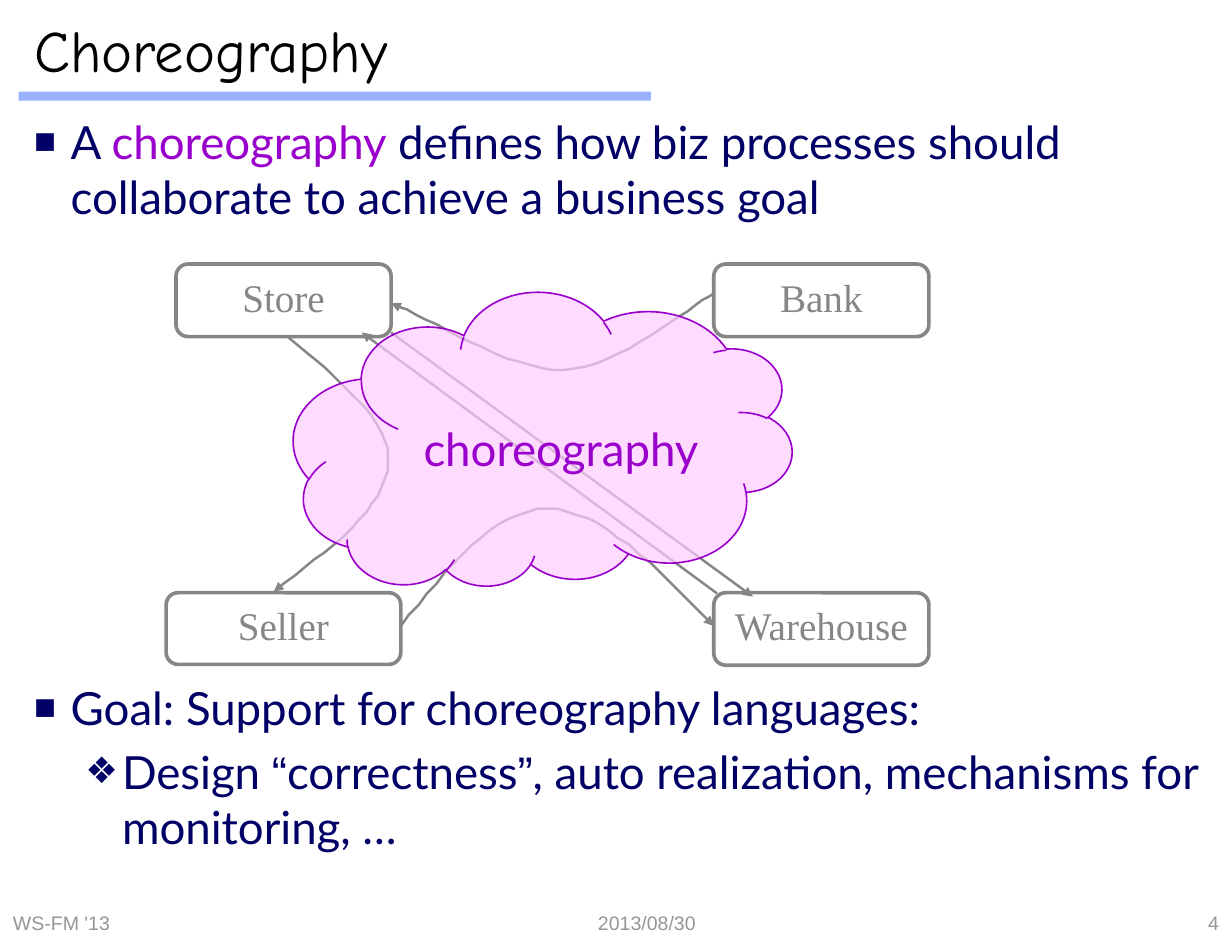
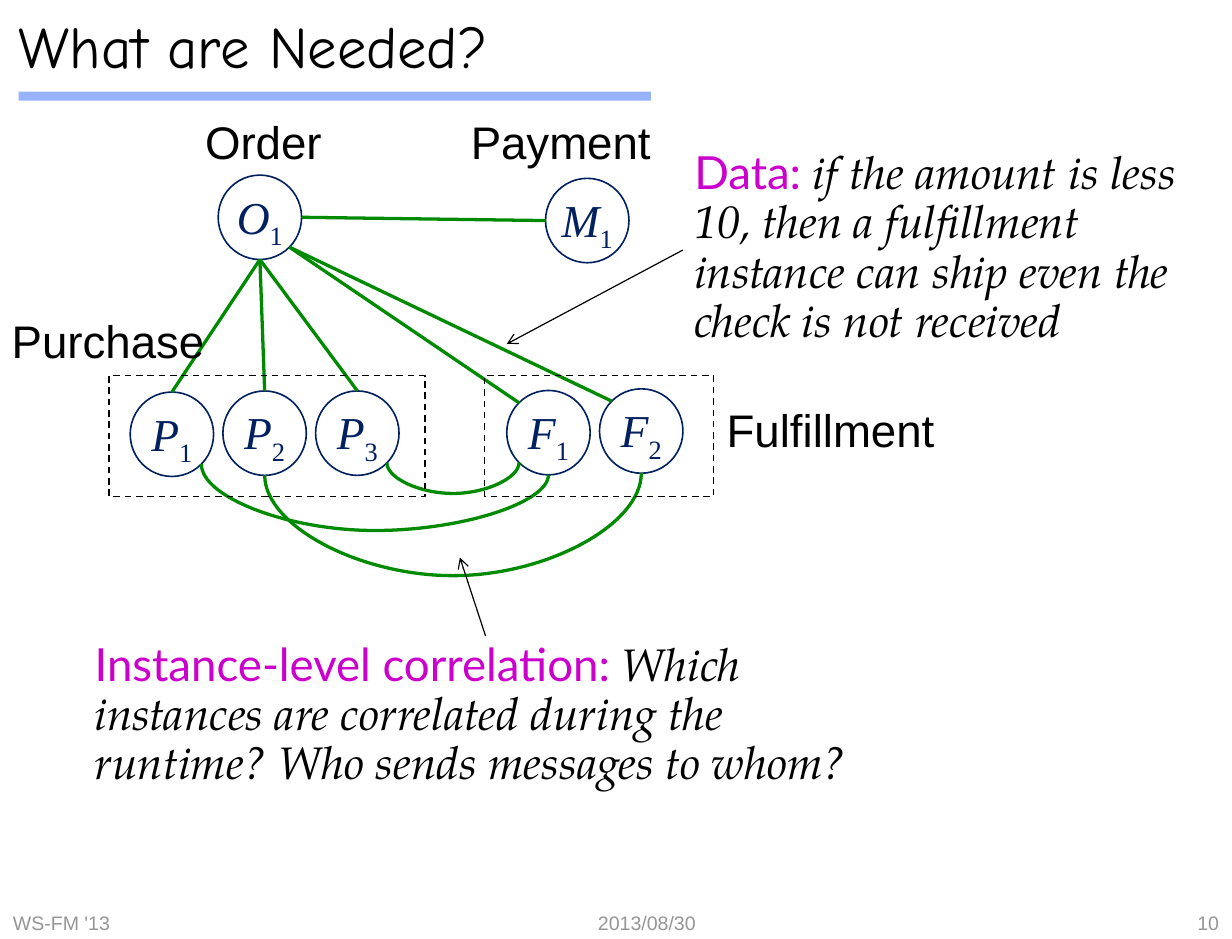
from lxml.etree import SubElement
from pptx import Presentation
from pptx.dml.color import RGBColor
from pptx.enum.dml import MSO_LINE
from pptx.enum.shapes import MSO_CONNECTOR, MSO_SHAPE
from pptx.enum.text import MSO_ANCHOR, MSO_AUTO_SIZE, PP_ALIGN
from pptx.oxml.ns import qn
from pptx.util import Pt

# ---- Content -------------------------------------------------------------
COLORS = {
    "band": "3366FF", "footer": "969696", "black": "000000", "white": "FFFFFF",
    "body": "000066", "purple": "9900CC", "cloud": "FFCCFF", "process": "868686",
    "node": "002060", "link": "008A00", "keyword": "CC00CC",
}
SANS, BODY, SERIF = "Arial", "Lato", "Times New Roman"
TITLE_FONT, NOTE_FONT = "Comic Neue", "TeX Gyre Pagella"

WIDTH, HEIGHT = 756, 576
BAND = (11.5, 56.2, 388, 5.6)
FOOTER_TOP, FOOTER_HEIGHT = 556.6, 19.4
EVENT, DATE = "WS-FM '13", "2013/08/30"

# Bullets: symbol, left margin, space before, runs of (text, font, colour)
BULLETS = [
    ("■", 22.5, 5.6, [
        ("A ", BODY, "body"), ("choreography", BODY, "purple"),
        (" defines how biz processes should collaborate to achieve a business goal",
         BODY, "body")]),
    ("■", 22.5, 280, [("Goal: Support for choreography languages:", BODY, "body")]),
    ("❖", 54, 5.6, [
        ("Design ", BODY, "body"), ("“", SANS, "body"), ("correctness", BODY, "body"),
        ("”", SANS, "body"),
        (", auto realization, mechanisms for monitoring, …", BODY, "body")]),
]
PROCESSES = [
    ("Store", (108, 162, 132, 44.5)), ("Seller", (102, 363.6, 144, 44)),
    ("Warehouse", (438, 363.6, 132, 44.5)), ("Bank", (438, 162, 132, 44.5)),
]
STRAIGHT_MESSAGES = [((440, 364), (222, 204)), ((240, 204), (462, 366))]
# Start point, then Bezier triples
CURVED_MESSAGES = [
    [(177, 207), (208, 232.5), (240, 258.5), (238.5, 284.5),
     (237, 310.5), (202.5, 337), (168, 363)],
    [(246, 384), (275, 348), (304, 312), (336, 312), (368, 312), (403, 348), (438, 384)],
    [(438, 180), (422.5, 188), (379.5, 226), (346.5, 227),
     (313, 228), (262, 194.5), (240, 186)],
]
CLOUD = (180, 180, 306, 180.7)
CLOUD_TEXT = (252, 258.5, 186, 38)

NODE_SIZE = (51.2, 51.8)
NODES = {
    "O1": (133.9, 107.4), "M1": (334.8, 109.4),
    "P1": (79.9, 240.5), "P2": (136.8, 239.8), "P3": (193.7, 239.8),
    "F1": (311, 239.5), "F2": (367.9, 238.5),
}
# Sites on an ellipse, as fractions of its size
NEAR, FAR = 0.1464, 0.8536
SITES = [(0.5, 0), (NEAR, NEAR), (0, 0.5), (NEAR, FAR),
         (0.5, 1), (FAR, FAR), (1, 0.5), (FAR, NEAR)]
# From node, site, to node, site, lowest level of a curve
CORRELATIONS = [
    ("O1", 4, "P2", 0, None), ("O1", 4, "P3", 0, None), ("O1", 4, "P1", 0, None),
    ("O1", 6, "M1", 2, None), ("O1", 5, "F1", 1, None), ("O1", 5, "F2", 1, None),
    ("P1", 5, "F1", 4, 325.5), ("P3", 5, "F1", 3, 302), ("P2", 4, "F2", 4, 353),
]
SCHEMAS = [
    ("Order", (118, 70, 88, 38)), ("Purchase", (-0.7, 192.2, 135, 38)),
    ("Payment", (281, 70, 127, 38)), ("Fulfillment", (438, 247, 145, 38)),
]
INSTANCE_GROUPS = [(67, 230.4, 193.7, 74.2), (297.4, 230.4, 140.4, 74.2)]
# Place, keyword, remark, side the arrow leaves from, arrow tip
NOTES = [
    ((419, 88.6, 326, 129.6), "Data: ",
     "if the amount is less 10, then a fulfillment instance can ship even "
     "the check is not received", 1, (311, 211)),
    ((51, 390.2, 494, 98.6), "Instance-level correlation: ",
     "Which instances are correlated during the runtime? "
     "Who sends messages to whom?", 0, (282.2, 342)),
]


# ---- Helpers -------------------------------------------------------------
def points(values):
    return [Pt(value) for value in values]


def rgb(name):
    return RGBColor.from_string(COLORS[name])


def apply(target, formats):
    for key, value in formats.items():
        setattr(target, key, value)


def add_run(paragraph, text, font, size, color, italic=None):
    run = paragraph.add_run()
    run.text = text
    apply(run.font, {"name": font, "size": Pt(size), "italic": italic})
    run.font.color.rgb = rgb(color)
    return run


def set_frame(frame, inset=7.9, anchor=MSO_ANCHOR.TOP, wrap=True):
    apply(frame, {
        "word_wrap": wrap, "auto_size": MSO_AUTO_SIZE.NONE, "vertical_anchor": anchor,
        "margin_left": Pt(inset), "margin_right": Pt(inset),
        "margin_top": Pt(3.6), "margin_bottom": Pt(3.6)})
    return frame.paragraphs[0]


def add_text(slide, place, runs, formats, **frame_options):
    box = slide.shapes.add_textbox(*points(place))
    paragraph = set_frame(box.text_frame, **frame_options)
    apply(paragraph, formats)
    for run in runs:
        add_run(paragraph, *run)
    return box


def set_alpha(shape, percent):
    color = shape.fill._xPr.find(qn("a:solidFill"))[0]
    SubElement(color, qn("a:alpha"), val=str(percent * 1000))


def paint(shape, fill=None, line=None, width=1):
    shape.shadow.inherit = False
    if fill:
        shape.fill.solid()
        shape.fill.fore_color.rgb = rgb(fill)
    else:
        shape.fill.background()
    if line:
        shape.line.color.rgb = rgb(line)
        shape.line.width = Pt(width)
    else:
        shape.line.fill.background()


def add_preset(slide, kind, place, **style):
    shape = slide.shapes.add_shape(kind, *points(place))
    paint(shape, **style)
    return shape


def add_arrowhead(item, head):
    SubElement(item.line._get_or_add_ln(), qn("a:tailEnd"), type=head)


def add_line(slide, start, end, color, width, head=None, kind=MSO_CONNECTOR.STRAIGHT):
    line = slide.shapes.add_connector(kind, *points(start + end))
    line.line.color.rgb = rgb(color)
    line.line.width = Pt(width)
    if head:
        add_arrowhead(line, head)
    SubElement(line.element.spPr, qn("a:effectLst"))
    return line


def bezier(start, c1, c2, end, steps=16):
    for step in range(1, steps + 1):
        t = step / steps
        weights = ((1 - t) ** 3, 3 * t * (1 - t) ** 2, 3 * t * t * (1 - t), t ** 3)
        yield tuple(sum(w * p[axis] for w, p in zip(weights, (start, c1, c2, end)))
                    for axis in (0, 1))


def add_curved_message(slide, controls):
    outline = [p for i in range(0, len(controls) - 1, 3) for p in bezier(*controls[i:i + 4])]
    builder = slide.shapes.build_freeform(*controls[0], scale=12700)
    builder.add_line_segments(outline, close=False)
    curve = builder.convert_to_shape()
    paint(curve, line="process", width=1.5)
    add_arrowhead(curve, "triangle")


def site_point(name, site):
    return tuple(corner + size * share
                 for corner, size, share in zip(NODES[name], NODE_SIZE, SITES[site]))


def sag(connector, start, end, lowest):
    """Turn a curved connector so that it hangs down to the lowest level."""
    rise, span = abs(end[1] - start[1]), end[0] - start[0]
    middle_x, middle_y = (start[0] + end[0]) / 2, (start[1] + end[1]) / 2
    apply(connector, {
        "left": Pt(middle_x - rise / 2), "top": Pt(middle_y - span / 2),
        "width": Pt(rise), "height": Pt(span)})
    falling = end[1] > start[1]
    xfrm = connector.element.spPr.find(qn("a:xfrm"))
    for key, value in {"rot": "16200000" if falling else "5400000", "flipH": "1",
                       "flipV": "0" if falling else "1"}.items():
        xfrm.set(key, value)
    bend = round((lowest - start[1]) / (end[1] - start[1]) * 100000)
    adjustments = connector.element.spPr.find(qn("a:prstGeom")).find(qn("a:avLst"))
    SubElement(adjustments, qn("a:gd"), name="adj1", fmla=f"val {bend}")


def add_correlation(slide, nodes, source, source_site, target, target_site, lowest):
    start, end = site_point(source, source_site), site_point(target, target_site)
    kind = MSO_CONNECTOR.CURVE if lowest else MSO_CONNECTOR.STRAIGHT
    link = add_line(slide, start, end, "link", 2, kind=kind)
    if lowest:
        sag(link, start, end, lowest)
    joints = link.element.find(qn("p:nvCxnSpPr")).find(qn("p:cNvCxnSpPr"))
    for tag, name, site in (("a:stCxn", source, source_site), ("a:endCxn", target, target_site)):
        SubElement(joints, qn(tag), id=str(nodes[name].shape_id), idx=str(site))


def add_bullet(paragraph, symbol, margin, space, runs):
    paragraph.space_before = Pt(space)
    for text, font, color in runs:
        add_run(paragraph, text, font, 28, color)
    properties = paragraph._p.get_or_add_pPr()
    properties.set("marL", str(Pt(margin)))
    properties.set("indent", str(Pt(-22.5)))
    SubElement(SubElement(properties, qn("a:buClr")), qn("a:srgbClr"), val=COLORS["body"])
    SubElement(properties, qn("a:buSzPct"), val="80000")
    SubElement(properties, qn("a:buFont"), typeface=SANS)
    SubElement(properties, qn("a:buChar"), char=symbol)


def add_base(deck, heading, place, number):
    """Slide with title, band and footers."""
    slide = deck.slides.add_slide(deck.slide_layouts[5])
    set_alpha(add_preset(slide, MSO_SHAPE.RECTANGLE, BAND, fill="band"), 50)
    title = slide.shapes.title
    apply(title, dict(zip(("left", "top", "width", "height"), points(place))))
    paragraph = set_frame(title.text_frame, anchor=MSO_ANCHOR.MIDDLE)
    paragraph.alignment = PP_ALIGN.LEFT
    add_run(paragraph, heading, TITLE_FONT, 36, "black")
    for text, left, width, alignment in (
            (EVENT, 0, 240, PP_ALIGN.LEFT), (DATE, 318.2, 157.6, PP_ALIGN.CENTER),
            (number, WIDTH - 157.6, 157.6, PP_ALIGN.RIGHT)):
        add_text(slide, (left, FOOTER_TOP, width, FOOTER_HEIGHT),
                 [(text, SANS, 12, "footer")], {"alignment": alignment},
                 anchor=MSO_ANCHOR.MIDDLE)
    return slide


# ---- Slides --------------------------------------------------------------
def build_choreography(deck):
    slide = add_base(deck, "Choreography", (13, 0, 731, 60), "4")

    # Bullets, with room for the diagram between them
    frame = slide.shapes.add_textbox(*points((13, 66.2, 731, 486))).text_frame
    paragraph = set_frame(frame)
    for index, bullet in enumerate(BULLETS):
        add_bullet(frame.add_paragraph() if index else paragraph, *bullet)

    # Processes and their messages
    for name, place in PROCESSES:
        process = add_preset(slide, MSO_SHAPE.ROUNDED_RECTANGLE, place,
                             line="process", width=2.25)
        label = set_frame(process.text_frame, anchor=MSO_ANCHOR.MIDDLE, wrap=False)
        apply(label, {"alignment": PP_ALIGN.CENTER, "line_spacing": 0.85})
        add_run(label, name, SERIF, 24, "process")
    for start, end in STRAIGHT_MESSAGES:
        add_line(slide, start, end, "process", 1.5, "triangle")
    for controls in CURVED_MESSAGES:
        add_curved_message(slide, controls)

    # Cloud over the messages
    cloud = add_preset(slide, MSO_SHAPE.CLOUD, CLOUD, fill="cloud", line="purple")
    cloud.rotation = 180.9
    set_alpha(cloud, 70)
    add_text(slide, CLOUD_TEXT, [("choreography", BODY, 28, "purple")],
             {"line_spacing": 0.9, "space_before": Pt(5.6)}, wrap=False)


def build_needs(deck):
    slide = add_base(deck, "What are Needed?", (3.6, -6.5, 349, 68.4), "10")
    spacing = {"line_spacing": 0.9, "space_before": Pt(5.6)}

    # Instances and their correlations
    nodes = {}
    for name, corner in NODES.items():
        nodes[name] = add_preset(slide, MSO_SHAPE.OVAL, corner + NODE_SIZE,
                                 fill="white", line="node")
        label = set_frame(nodes[name].text_frame, inset=0, anchor=MSO_ANCHOR.MIDDLE)
        apply(label, {"alignment": PP_ALIGN.CENTER, **spacing})
        add_run(label, name[0], SERIF, 28, "node", True)
        subscript = add_run(label, name[1], SERIF, 28, "node", False)
        subscript.font._element.set("baseline", "-25000")
    for correlation in CORRELATIONS:
        add_correlation(slide, nodes, *correlation)

    # Schema names and instance groups
    for name, place in SCHEMAS:
        add_text(slide, place, [(name, SANS, 28, "black")], spacing, wrap=False)
    for place in INSTANCE_GROUPS:
        group = add_preset(slide, MSO_SHAPE.RECTANGLE, place, line="black")
        group.line.dash_style = MSO_LINE.DASH

    # Notes with arrows
    for place, keyword, remark, side, tip in NOTES:
        note = add_text(slide, place, [(keyword, BODY, 28, "keyword"),
                                       (remark, NOTE_FONT, 28, "black", True)],
                        spacing, inset=7.2)
        arrow = add_line(slide, place[:2], tip, "black", 0.75, "arrow")
        arrow.begin_connect(note, side)


def main():
    deck = Presentation()
    apply(deck, {"slide_width": Pt(WIDTH), "slide_height": Pt(HEIGHT)})
    build_choreography(deck)
    build_needs(deck)
    deck.save("out.pptx")


if __name__ == "__main__":
    main()
